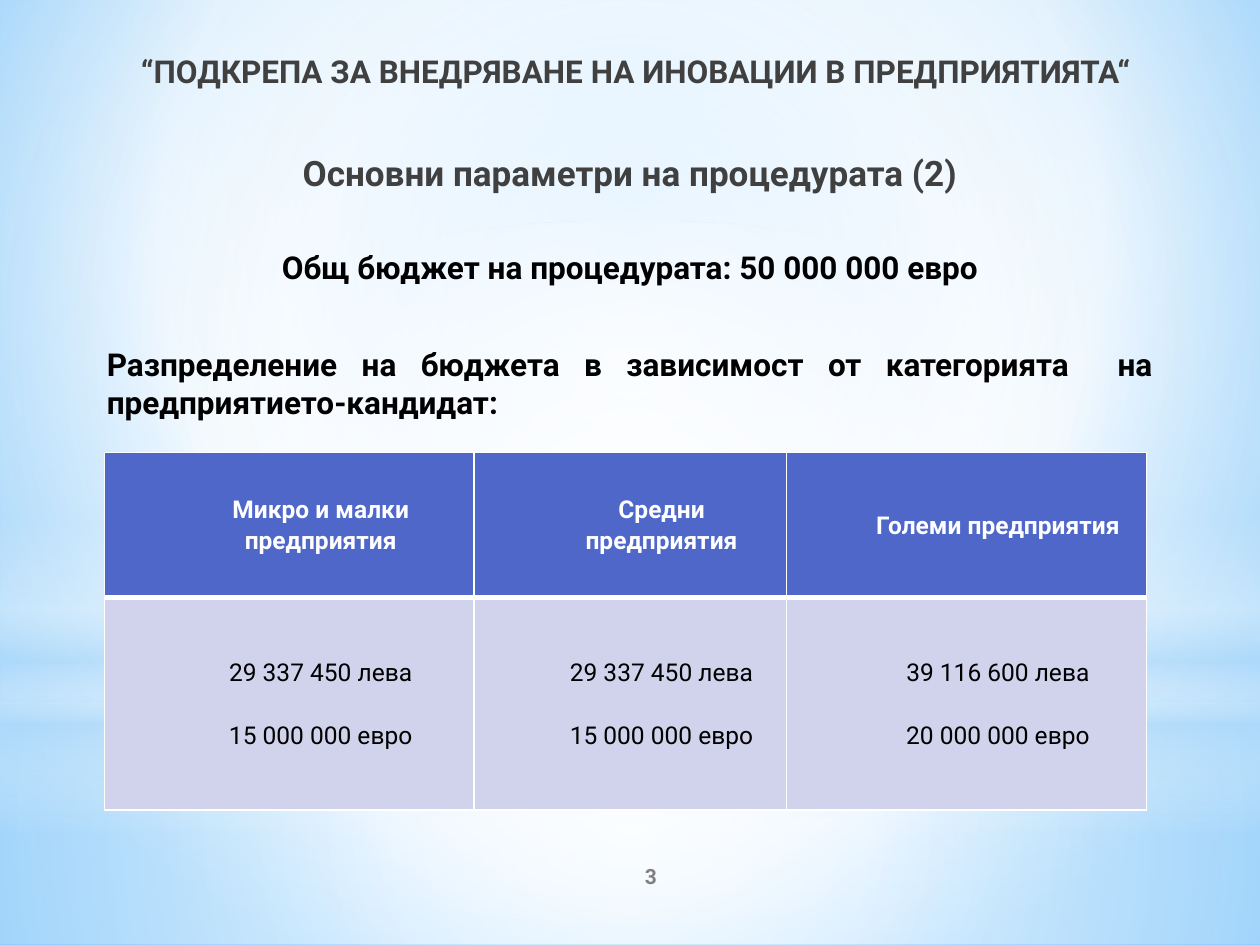
from dataclasses import dataclass

import pptx
import pptx.dml.color
import pptx.enum.shapes
import pptx.enum.text
import pptx.oxml
import pptx.oxml.ns
import pptx.util

Pt = pptx.util.Pt
RGB = pptx.dml.color.RGBColor.from_string
Align = pptx.enum.text.PP_ALIGN
Anchor = pptx.enum.text.MSO_ANCHOR
Shape = pptx.enum.shapes.MSO_SHAPE
qn = pptx.oxml.ns.qn
NS = pptx.oxml.ns.nsdecls("a")


@dataclass(frozen=True)
class Theme:
    font: str = "Roboto"
    white: str = "FFFFFF"
    black: str = "000000"
    heading: str = "404040"
    muted: str = "808080"
    header: str = "4E67C8"
    body: str = "D0D3EB"
    haze: str = "B4DCFA"
    sky: str = "9ED5FF"
    deep_sky: str = "5BB9FF"
    size_heading: int = 20
    size_text: int = 18
    size_table: int = 14
    size_number: int = 12


T = Theme()


@dataclass(frozen=True)
class Box:
    x: float
    y: float
    w: float
    h: float

    def points(self) -> tuple:
        return Pt(self.x), Pt(self.y), Pt(self.w), Pt(self.h)


@dataclass(frozen=True)
class Gradient:
    stops: tuple
    center: tuple | None = (50, 50, 50, 50)


@dataclass(frozen=True)
class Layer:
    kind: int
    box: Box
    gradient: Gradient


@dataclass(frozen=True)
class Line:
    text: str
    size: int
    color: str
    align: int = Align.CENTER
    before: float = 0
    after: float = 0
    bold: bool = True


SKY = Gradient(((0, T.sky, 100), (60, T.white, 100), (100, T.deep_sky, 100)),
               (20, 10, 20, 60))

LAYERS = (
    Layer(Shape.RECTANGLE, Box(0, 402, 720, 138),
          Gradient(((0, T.white, 91), (37, T.white, 76), (100, T.haze, 79)))),
    Layer(Shape.RECTANGLE, Box(0, 0, 720, 402),
          Gradient(((0, T.white, 89), (48, T.white, 62), (100, T.haze, 79)))),
    Layer(Shape.RECTANGLE, Box(0, 296.6, 720, 180),
          Gradient(((0, T.white, 0), (29, T.white, 30), (45, T.haze, 40),
                    (55, T.white, 26), (65, T.haze, 60), (100, T.white, 0)), None)),
    Layer(Shape.OVAL, Box(0, 126, 720, 402),
          Gradient(((0, T.white, 100), (56, T.white, 0)))),
)

TITLE = Line("“ПОДКРЕПА ЗА ВНЕДРЯВАНЕ НА ИНОВАЦИИ В ПРЕДПРИЯТИЯТА“",
             T.size_text, T.heading)
BODY = (
    Line("Основни параметри на процедурата (2)", T.size_heading, T.heading),
    Line("Общ бюджет на процедурата: 50 000 000 евро",
         T.size_text, T.black, before=31),
    Line("Разпределение на бюджета в зависимост от категорията  на предприятието-кандидат:",
         T.size_text, T.black, Align.JUSTIFY, before=34),
)
NUMBER = Line("3", T.size_number, T.muted)

BUDGET = (
    ("Микро и малки предприятия", "29 337 450 лева", "15 000 000 евро"),
    ("Средни предприятия", "29 337 450 лева", "15 000 000 евро"),
    ("Големи предприятия", "39 116 600 лева", "20 000 000 евро"),
)
COLUMN_WIDTHS = (211, 178.5, 206)
ROW_HEIGHTS = (82.8, 121.7)


def set_gradient(fill, element, gradient: Gradient) -> None:
    stops = "".join(
        f'<a:gs pos="{pos * 1000}"><a:srgbClr val="{color}">'
        f'<a:alpha val="{alpha * 1000}"/></a:srgbClr></a:gs>'
        for pos, color, alpha in gradient.stops)
    if gradient.center:
        sides = " ".join(f'{side}="{value * 1000}"'
                         for side, value in zip("ltrb", gradient.center))
        shade = f'<a:path path="circle"><a:fillToRect {sides}/></a:path>'
    else:
        shade = '<a:lin ang="5400000" scaled="0"/>'
    fill.background()
    old = element.find(".//" + qn("a:noFill"))
    old.getparent().replace(old, pptx.oxml.parse_xml(
        f'<a:gradFill {NS} rotWithShape="1"><a:gsLst>{stops}</a:gsLst>{shade}</a:gradFill>'))


def add_layer(s, layer: Layer) -> None:
    sp = s.shapes.add_shape(layer.kind, *layer.box.points())
    sp.shadow.inherit = False
    set_gradient(sp.fill, sp.element.spPr, layer.gradient)
    sp.line.fill.background()


def write_lines(tf, lines: tuple) -> None:
    tf.text = "\n".join(line.text for line in lines)
    for p, line in zip(tf.paragraphs, lines):
        p.alignment = line.align
        p.space_before = Pt(line.before)
        p.space_after = Pt(line.after)
        font = p.runs[0].font
        font.name = T.font
        font.size = Pt(line.size)
        font.bold = line.bold
        font.color.rgb = RGB(line.color)


def add_text(s, box: Box, lines: tuple, anchor=Anchor.TOP) -> None:
    tf = s.shapes.add_textbox(*box.points()).text_frame
    tf.word_wrap = True
    tf.vertical_anchor = anchor
    write_lines(tf, lines)


def set_borders(cell, top: float, bottom: float) -> None:
    tc_pr = cell._tc.get_or_add_tcPr()
    for i, (side, width) in enumerate(zip("LRTB", (1, 1, top, bottom))):
        tc_pr.insert(i, pptx.oxml.parse_xml(
            f'<a:ln{side} {NS} w="{Pt(width)}"><a:solidFill>'
            f'<a:srgbClr val="{T.white}"/></a:solidFill></a:ln{side}>'))


def fill_cell(cell, lines: tuple, color: str, top: float, bottom: float) -> None:
    cell.vertical_anchor = Anchor.MIDDLE
    cell.margin_left = cell.margin_right = Pt(5)
    cell.margin_top = cell.margin_bottom = 0
    cell.fill.solid()
    cell.fill.fore_color.rgb = RGB(color)
    set_borders(cell, top, bottom)
    write_lines(cell.text_frame, lines)
    for p in cell.text_frame.paragraphs:
        p.line_spacing = 1.07
        p_pr = p._p.get_or_add_pPr()
        p_pr.set("marL", str(Pt(36)))
        p_pr.set("indent", "0")


def add_budget_table(s, x: float, y: float) -> None:
    box = Box(x, y, sum(COLUMN_WIDTHS), sum(ROW_HEIGHTS))
    table = s.shapes.add_table(2, len(BUDGET), *box.points()).table
    for row, height in zip(table.rows, ROW_HEIGHTS):
        row.height = Pt(height)
    for i, (width, (category, *amounts)) in enumerate(zip(COLUMN_WIDTHS, BUDGET)):
        table.columns[i].width = Pt(width)
        heading = Line(category, T.size_table, T.white, after=18)
        values = tuple(Line(amount, T.size_table, T.black, after=18, bold=False)
                       for amount in amounts)
        fill_cell(table.cell(0, i), (heading,), T.header, 1, 3)
        fill_cell(table.cell(1, i), values, T.body, 3, 1)


def main() -> None:
    prs = pptx.Presentation()
    prs.slide_width, prs.slide_height = Pt(720), Pt(540)
    s = prs.slides.add_slide(prs.slide_layouts[6])
    set_gradient(s.background.fill, s.element, SKY)
    for layer in LAYERS:
        add_layer(s, layer)
    add_text(s, Box(300, 486, 144, 28.8), (NUMBER,), Anchor.MIDDLE)
    add_text(s, Box(40, 26, 646.6, 67.7), (TITLE,))
    add_text(s, Box(54, 83, 612, 425.5), BODY)
    add_budget_table(s, 59.8, 258.5)
    prs.save("out.pptx")


if __name__ == "__main__":
    main()
